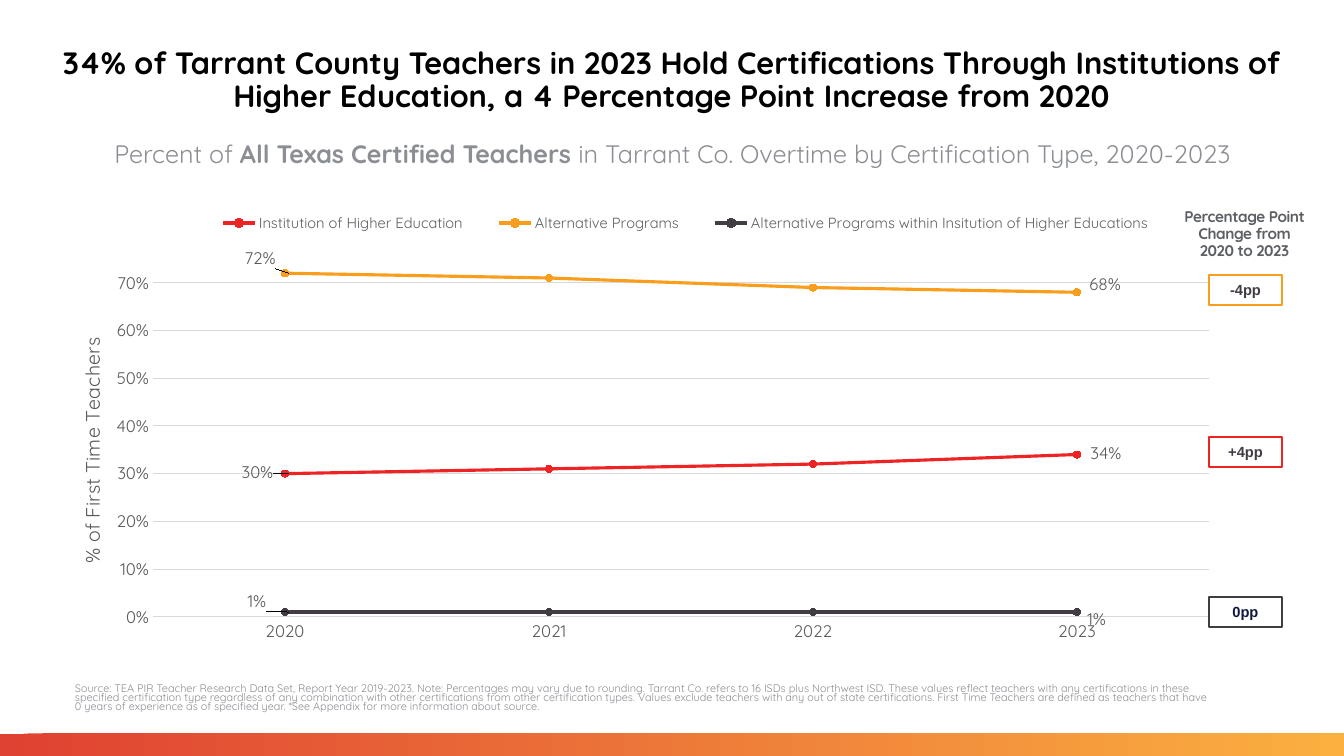
from lxml import etree
from pptx import Presentation
from pptx.chart.data import CategoryChartData
from pptx.dml.color import RGBColor
from pptx.enum.chart import XL_CHART_TYPE as Kind, XL_LABEL_POSITION as Spot
from pptx.enum.chart import XL_LEGEND_POSITION as Side, XL_MARKER_STYLE as Mark
from pptx.enum.chart import XL_TICK_MARK as Tick
from pptx.enum.shapes import MSO_SHAPE as Shape
from pptx.enum.text import MSO_ANCHOR as Anchor, PP_ALIGN as Align
from pptx.oxml import parse_xml
from pptx.oxml.ns import qn
from pptx.util import Pt

PX = 914400 / 100.8
FACE = "Quicksand"
RED, ORANGE, DARK = "ED2324", "F89E1B", "423D42"
GREY, SLATE, AXIS, RULE = "8B8E93", "5C5F63", "595959", "D9D9D9"
CHART = (66, 193, 1159, 475)
YEARS = ["2020", "2021", "2022", "2023"]
# name, colour, values, label shifts in px for the first and last year
LINES = [
    ("Institution of Higher Education", RED, (0.30, 0.31, 0.32, 0.34),
     {0: (-51, -1), 3: (6, -1)}),
    ("Alternative Programs", ORANGE, (0.72, 0.71, 0.69, 0.68),
     {0: (-48, -15), 3: (5, -8)}),
    ("Alternative Programs within Insitution of Higher Educations", DARK,
     (0.01, 0.01, 0.01, 0.01), {0: (-45, -11), 3: (3, 7)}),
]
CHANGES = [("-4pp", 275, ORANGE, DARK), ("+4pp", 437, RED, DARK),
           ("0pp", 597, DARK, "101740")]
SOURCE = (
    "Source: TEA PIR Teacher Research Data Set, Report Year 2019-2023. Note: "
    "Percentages may vary due to rounding. Tarrant Co. refers to 16 ISDs plus "
    "Northwest ISD. These values reflect teachers with any certifications in "
    "these specified certification type regardless of any combination with "
    "other certifications from other certification types. Values exclude "
    "teachers with any out of state certifications. First Time Teachers are "
    "defined as teachers that have 0 years of experience as of specified year. "
    "*See Appendix for more information about source.")


def rgb(code):
    return RGBColor.from_string(code)


def emu(*lengths):
    return [round(n * PX) for n in lengths]


def style(font, size, color, bold=False, face=FACE):
    font.name, font.size, font.bold = face, Pt(size), bold
    font.color.rgb = rgb(color)


def pad(frame, size):
    frame.margin_left = frame.margin_right = emu(size)[0]
    frame.margin_top = frame.margin_bottom = emu(size)[0]
    frame.vertical_anchor = Anchor.MIDDLE
    frame.word_wrap = True


def write(slide, box, parts, size, color, bold=False, align=Align.CENTER,
          gap=0.9):
    """Add a text box; every second part is bold."""
    frame = slide.shapes.add_textbox(*emu(*box)).text_frame
    frame.word_wrap = True
    para = frame.paragraphs[0]
    para.alignment, para.line_spacing = align, gap
    style(para.font, size, color, bold)
    for i, part in enumerate(parts):
        run = para.add_run()
        run.text = part
        if i % 2:
            run.font.bold = True
    return frame


def place(parent, after, x, y, w=None, h=None, inner=False, edge=True):
    """Give a chart part a manual layout in px of the chart's box."""
    for old in parent.findall(qn("c:layout")):
        parent.remove(old)
    layout = parent.makeelement(qn("c:layout"))
    manual = etree.SubElement(layout, qn("c:manualLayout"))
    rows = [("layoutTarget", "inner")] if inner else []
    if edge:
        rows += [("xMode", "edge"), ("yMode", "edge")]
    for key, n, full in (("x", x, CHART[2]), ("y", y, CHART[3]),
                         ("w", w, CHART[2]), ("h", h, CHART[3])):
        if n is not None:
            rows.append((key, f"{n / full:.4f}"))
    for key, value in rows:
        etree.SubElement(manual, qn("c:" + key)).set("val", value)
    if after:
        parent.find(qn(after)).addnext(layout)
    else:
        parent.insert(0, layout)


def draw_line(line, color, shifts):
    line.smooth = False
    line.format.line.color.rgb = rgb(color)
    line.format.line.width = Pt(2.25)
    line.marker.style, line.marker.size = Mark.CIRCLE, 5
    line.marker.format.fill.solid()
    line.marker.format.fill.fore_color.rgb = rgb(color)
    line.marker.format.line.color.rgb = rgb(color)
    line.data_labels.show_value = False
    for i, shift in shifts.items():
        label = line.points[i].data_label
        style(label.font, 12, AXIS)
        label.position = Spot.RIGHT
    labels = line.data_labels._element
    for node, shift in zip(labels.findall(qn("c:dLbl")), shifts.values()):
        place(node, "c:idx", *shift, edge=False)
    labels.append(parse_xml(
        '<c:extLst xmlns:c="http://schemas.openxmlformats.org/drawingml/2006/chart">'
        '<c:ext uri="{CE6537A1-D6FC-4f65-9D91-7224C49458BB}" '
        'xmlns:c15="http://schemas.microsoft.com/office/drawing/2012/chart">'
        '<c15:showLeaderLines val="1"/></c:ext></c:extLst>'))


def draw_axes(chart):
    years, share = chart.category_axis, chart.value_axis
    for axis in (years, share):
        axis.major_tick_mark = axis.minor_tick_mark = Tick.NONE
        style(axis.tick_labels.font, 12, AXIS)
    grid = share.major_gridlines.format.line
    for rule in (years.format.line, grid):
        rule.color.rgb, rule.width = rgb(RULE), Pt(0.75)
    share.format.line.fill.background()
    share.minimum_scale, share.maximum_scale = 0, 0.75
    share.major_unit = 0.1
    share.tick_labels.number_format = "0%"
    share.tick_labels.number_format_is_linked = False
    title = share.axis_title
    title.text_frame.text = "% of First Time Teachers"
    style(title.text_frame.paragraphs[0].font, 14, AXIS)
    place(title._element, "c:tx", 8, 141)


def draw_chart(slide):
    data = CategoryChartData(number_format="0%")
    data.categories = YEARS
    for name, _, values, _ in LINES:
        data.add_series(name, values)
    chart = slide.shapes.add_chart(Kind.LINE_MARKERS, *emu(*CHART), data).chart
    style(chart.font, 10, "000000")
    chart.has_title = False
    chart.plots[0].vary_by_categories = False
    draw_axes(chart)
    for line, (_, color, _, shifts) in zip(chart.plots[0].series, LINES):
        draw_line(line, color, shifts)
    chart.has_legend = True
    legend = chart.legend
    legend.position, legend.include_in_layout = Side.BOTTOM, False
    style(legend.font, 10.5, SLATE)
    place(legend._element, "c:legendPos", 126, 16, 988, 28)
    place(chart._chartSpace.chart.plotArea, None, 87, 66, 1056, 358, inner=True)


def draw_changes(slide, left):
    """Column of percentage point changes beside the chart."""
    head = write(slide, (left, 204, 137, 61),
                 ["Percentage Point Change from 2020 to 2023"], 11, SLATE, True)
    pad(head, 6)
    head.paragraphs[0].runs[0]._r.get_or_add_rPr().set("spc", "-30")
    for text, top, edge, ink in CHANGES:
        tag = slide.shapes.add_shape(Shape.RECTANGLE,
                                     *emu(left + 33, top, 73, 30))
        tag.shadow.inherit = False
        tag.fill.background()
        tag.line.color.rgb, tag.line.width = rgb(edge), Pt(1.5)
        pad(tag.text_frame, 6)
        para = tag.text_frame.paragraphs[0]
        para.text, para.alignment = text, Align.CENTER
        style(para.font, 10.5, ink, True, "Arial")


def draw_band(slide, box):
    band = slide.shapes.add_shape(Shape.RECTANGLE, *emu(*box))
    band.shadow.inherit = False
    band.line.fill.background()
    band.fill.gradient()
    band.fill.gradient_angle = 1
    for stop, color, spot in zip(band.fill.gradient_stops,
                                 ("DF4132", "FBB040"), (0, 1)):
        stop.color.rgb, stop.position = rgb(color), spot


def main():
    deck = Presentation()
    deck.slide_width, deck.slide_height = emu(1344, 756)
    slide = deck.slides.add_slide(deck.slide_layouts[6])
    draw_band(slide, (0, 734, 1344, 22))
    draw_chart(slide)
    write(slide, (93, 137, 1159, 76),
          ["Percent of ", "All Texas Certified Teachers ",
           "in Tarrant Co. Overtime by Certification Type, 2020-2023"], 18, GREY)
    write(slide, (24, 43, 1295, 91),
          ["34% of Tarrant County Teachers in 2023 Hold Certifications Through "
           "Institutions of Higher Education, a 4 Percentage Point Increase "
           "from 2020"], 22, "000000", True)
    write(slide, (65, 680, 1159, 49), [SOURCE], 7.8, GREY,
          align=Align.LEFT, gap=0.7)
    draw_changes(slide, 1176)
    deck.save("out.pptx")


if __name__ == "__main__":
    main()
